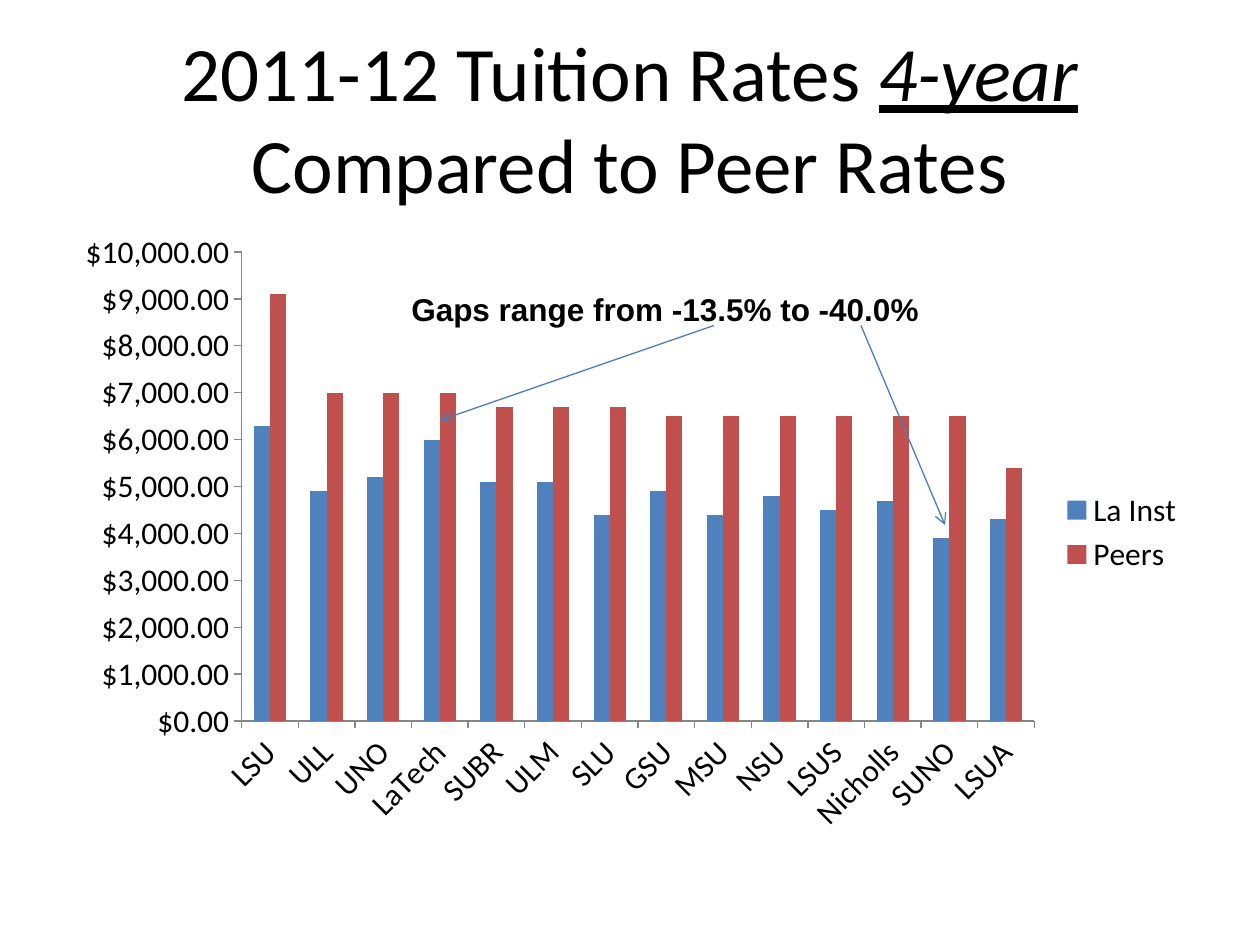
import pptx
import pptx.chart.data
import pptx.dml.color
import pptx.enum.chart
import pptx.enum.shapes
import pptx.enum.text
import pptx.oxml
import pptx.oxml.ns
import pptx.util
from pptx.util import Pt

BLACK = "000000"
AXIS_GRAY = "868686"
ARROW_BLUE = "4B7EBC"

SCHOOLS = ["LSU", "ULL", "UNO", "LaTech", "SUBR", "ULM", "SLU",
           "GSU", "MSU", "NSU", "LSUS", "Nicholls", "SUNO", "LSUA"]
# name, colour, tuition per school
TUITION = [
    ("La Inst", "4F81BD", [6300, 4900, 5200, 6000, 5100, 5100, 4400,
                           4900, 4400, 4800, 4500, 4700, 3900, 4300]),
    ("Peers", "C0504D", [9100] + [7000] * 3 + [6700] * 3 + [6500] * 6 + [5400]),
]


def rgb(hex_color):
    return pptx.dml.color.RGBColor.from_string(hex_color)


def style_font(font, face, size, color=BLACK):
    font.name = face
    font.size = Pt(size)
    font.color.rgb = rgb(color)


def add_run(paragraph, text, face, size, **emphasis):
    run = paragraph.add_run()
    run.text = text
    style_font(run.font, face, size)
    for attribute, value in emphasis.items():
        setattr(run.font, attribute, value)


def add_title(slide):
    frame = slide.shapes.add_textbox(Pt(36), Pt(21.6), Pt(648), Pt(90)).text_frame
    frame.word_wrap = True
    frame.vertical_anchor = pptx.enum.text.MSO_ANCHOR.MIDDLE
    heading = frame.paragraphs[0]
    heading.alignment = pptx.enum.text.PP_ALIGN.CENTER
    add_run(heading, "2011-12 Tuition Rates ", "Calibri", 44)
    add_run(heading, "4-year", "Calibri", 44, italic=True, underline=True)
    heading.add_line_break()
    add_run(heading, "Compared to Peer Rates", "Calibri", 44)


def style_axis(axis):
    axis.has_major_gridlines = False
    axis.major_tick_mark = pptx.enum.chart.XL_TICK_MARK.OUTSIDE
    axis.minor_tick_mark = pptx.enum.chart.XL_TICK_MARK.NONE
    axis.format.line.color.rgb = rgb(AXIS_GRAY)
    axis.format.line.width = Pt(0.75)


def add_tuition_chart(slide):
    data = pptx.chart.data.CategoryChartData()
    data.categories = SCHOOLS
    for name, _, rates in TUITION:
        data.add_series(name, rates)
    chart = slide.shapes.add_chart(
        pptx.enum.chart.XL_CHART_TYPE.COLUMN_CLUSTERED,
        Pt(36), Pt(126), Pt(648), Pt(356.4), data).chart
    chart.has_title = False
    style_font(chart.font, "Calibri", 18)

    plot = chart.plots[0]
    plot.gap_width = 150
    plot.overlap = 0
    plot.vary_by_categories = False
    for series, (_, color, _) in zip(plot.series, TUITION):
        series.format.fill.solid()
        series.format.fill.fore_color.rgb = rgb(color)

    style_axis(chart.category_axis)
    dollars = chart.value_axis
    style_axis(dollars)
    dollars.minimum_scale = 0
    dollars.maximum_scale = 10000
    dollars.major_unit = 1000
    dollars.tick_labels.number_format = '"$"#,##0.00'
    dollars.tick_labels.number_format_is_linked = False

    chart.has_legend = True
    chart.legend.position = pptx.enum.chart.XL_LEGEND_POSITION.RIGHT
    chart.legend.include_in_layout = False


def add_gap_note(slide):
    frame = slide.shapes.add_textbox(Pt(228), Pt(162), Pt(307.5), Pt(29)).text_frame
    frame.word_wrap = False
    frame.auto_size = pptx.enum.text.MSO_AUTO_SIZE.SHAPE_TO_FIT_TEXT
    add_run(frame.paragraphs[0], "Gaps range from -13.5% to -40.0%", "Arial", 18, bold=True)


def add_arrow(slide, start, end):
    arrow = slide.shapes.add_connector(
        pptx.enum.shapes.MSO_CONNECTOR.STRAIGHT, *map(Pt, start + end))
    arrow.line.color.rgb = rgb(ARROW_BLUE)
    arrow.line.width = Pt(0.75)
    namespace = pptx.oxml.ns.nsdecls("a")
    arrow.line._get_or_add_ln().append(
        pptx.oxml.parse_xml(f'<a:tailEnd {namespace} type="arrow"/>'))
    arrow._element.spPr.append(pptx.oxml.parse_xml(f"<a:effectLst {namespace}/>"))


def main():
    deck = pptx.Presentation()
    deck.slide_width, deck.slide_height = Pt(720), Pt(540)
    slide = deck.slides.add_slide(deck.slide_layouts[6])
    add_title(slide)
    add_tuition_chart(slide)
    add_gap_note(slide)
    add_arrow(slide, (408, 186), (252, 240))
    add_arrow(slide, (492, 186), (540, 300))
    deck.save("out.pptx")


if __name__ == "__main__":
    main()
